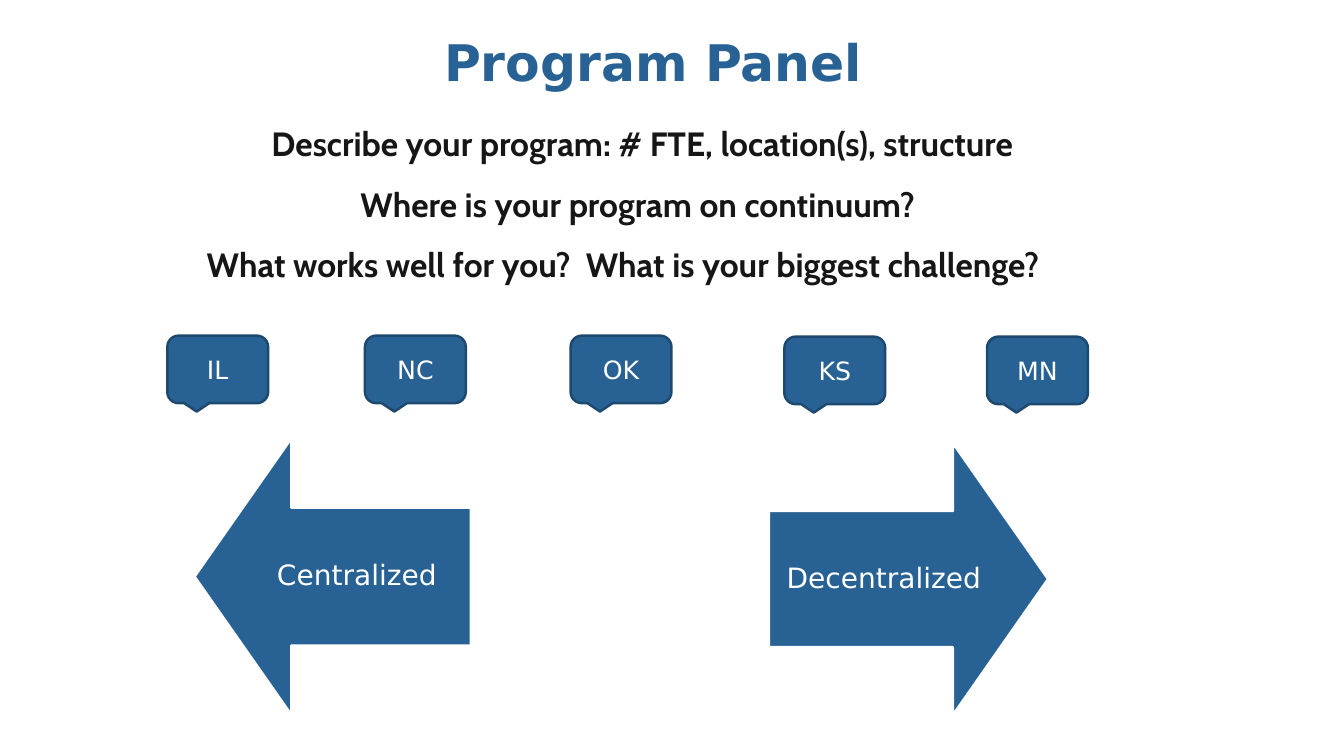
"""Build the Program Panel slide with its centralization continuum."""
from dataclasses import dataclass

from pptx import Presentation
from pptx.dml.color import RGBColor
from pptx.enum.shapes import MSO_SHAPE
from pptx.enum.text import MSO_ANCHOR, PP_ALIGN
from pptx.util import Inches, Pt


@dataclass(frozen=True)
class Theme:
    """Colours, fonts and type sizes."""
    blue: RGBColor = RGBColor(0x28, 0x62, 0x95)
    navy: RGBColor = RGBColor(0x1E, 0x49, 0x6E)
    ink: RGBColor = RGBColor(0x16, 0x16, 0x17)
    white: RGBColor = RGBColor(0xFF, 0xFF, 0xFF)
    sans: str = "DejaVu Sans"
    cabin: str = "Cabin"
    title: int = 36
    question: int = 24
    arrow: int = 20
    state: int = 18
    outline: float = 1.75


@dataclass(frozen=True)
class Box:
    """Position and size in inches."""
    left: float
    top: float
    width: float
    height: float

    def emu(self) -> tuple:
        """Return the frame as lengths."""
        return tuple(Inches(v) for v in (self.left, self.top, self.width, self.height))


@dataclass(frozen=True)
class Arrow:
    """One end of the continuum."""
    label: str
    box: Box
    label_box: Box
    rotation: int


@dataclass(frozen=True)
class Callout:
    """A state's place on the continuum."""
    state: str
    left: float
    top: float


@dataclass(frozen=True)
class Question:
    """A panel question and its right indent in inches."""
    text: str
    indent: float


T = Theme()
ARROWS = (
    Arrow("Centralized", Box(1.93, 4.35, 2.74, 2.74), Box(2.41, 5.03, 2.26, 1.37), 270),
    Arrow("Decentralized", Box(7.66, 4.36, 2.7, 2.77), Box(7.62, 5.07, 2.29, 1.35), 90),
)
CALLOUTS = (
    Callout("IL", 1.66, 3.33),
    Callout("NC", 3.62, 3.33),
    Callout("OK", 5.66, 3.33),
    Callout("KS", 7.78, 3.34),
    Callout("MN", 9.79, 3.34),
)
QUESTIONS = (
    Question("Describe your program: # FTE, location(s), structure", 0),
    Question("Where is your program on continuum?", 0.09),
    Question("What works well for you?  What is your biggest challenge?", 0.38),
)


def style(p, size: int, color: RGBColor, name: str = T.sans, bold: bool = False) -> None:
    """Centre a paragraph and set its font."""
    p.alignment = PP_ALIGN.CENTER
    p.font.size = Pt(size)
    p.font.name = name
    p.font.bold = bold
    p.font.color.rgb = color


def add_text(s, box: Box, anchor: MSO_ANCHOR):
    """Add a wrapping text box and return its frame."""
    tf = s.shapes.add_textbox(*box.emu()).text_frame
    tf.word_wrap = True
    tf.vertical_anchor = anchor
    return tf


def add_shape(s, kind: MSO_SHAPE, box: Box, line: RGBColor):
    """Add a flat blue shape with the given outline."""
    sp = s.shapes.add_shape(kind, *box.emu())
    sp.shadow.inherit = False
    sp.fill.solid()
    sp.fill.fore_color.rgb = T.blue
    sp.line.color.rgb = line
    sp.line.width = Pt(T.outline)
    return sp


def add_arrow(s, arrow: Arrow) -> None:
    """Draw an arrow and its upright label."""
    sp = add_shape(s, MSO_SHAPE.UP_ARROW, arrow.box, T.white)
    sp.adjustments[0] = 0.5
    sp.adjustments[1] = 0.35
    sp.rotation = arrow.rotation
    tf = add_text(s, arrow.label_box, MSO_ANCHOR.MIDDLE)
    tf.margin_left = tf.margin_right = tf.margin_top = tf.margin_bottom = Inches(0.16)
    p = tf.paragraphs[0]
    p.text = arrow.label
    p.line_spacing = 0.9
    style(p, T.arrow, T.white)


def add_callout(s, callout: Callout) -> None:
    """Draw a state callout."""
    box = Box(callout.left, callout.top, 1, 0.67)
    sp = add_shape(s, MSO_SHAPE.ROUNDED_RECTANGULAR_CALLOUT, box, T.navy)
    tf = sp.text_frame
    tf.vertical_anchor = MSO_ANCHOR.MIDDLE
    p = tf.paragraphs[0]
    p.text = callout.state
    style(p, T.state, T.white)


def add_questions(s) -> None:
    """Write the panel questions."""
    tf = add_text(s, Box(0.94, 1.07, 10.86, 1.8), MSO_ANCHOR.BOTTOM)
    for i, question in enumerate(QUESTIONS):
        p = tf.add_paragraph() if i else tf.paragraphs[0]
        p.text = question.text
        p.line_spacing = 1.5
        style(p, T.question, T.ink, T.cabin, True)
        p._p.get_or_add_pPr().set("marR", str(Inches(question.indent)))


def add_title(s) -> None:
    """Write the slide title."""
    p = add_text(s, Box(2.5, 0.26, 7.96, 0.76), MSO_ANCHOR.TOP).paragraphs[0]
    p.text = "Program Panel"
    style(p, T.title, T.blue, bold=True)


def main() -> None:
    """Build and save the slide."""
    prs = Presentation()
    prs.slide_width, prs.slide_height = Inches(13.33), Inches(7.5)
    s = prs.slides.add_slide(prs.slide_layouts[6])
    for arrow in ARROWS:
        add_arrow(s, arrow)
    for callout in CALLOUTS:
        add_callout(s, callout)
    add_questions(s)
    add_title(s)
    prs.save("out.pptx")


if __name__ == "__main__":
    main()
